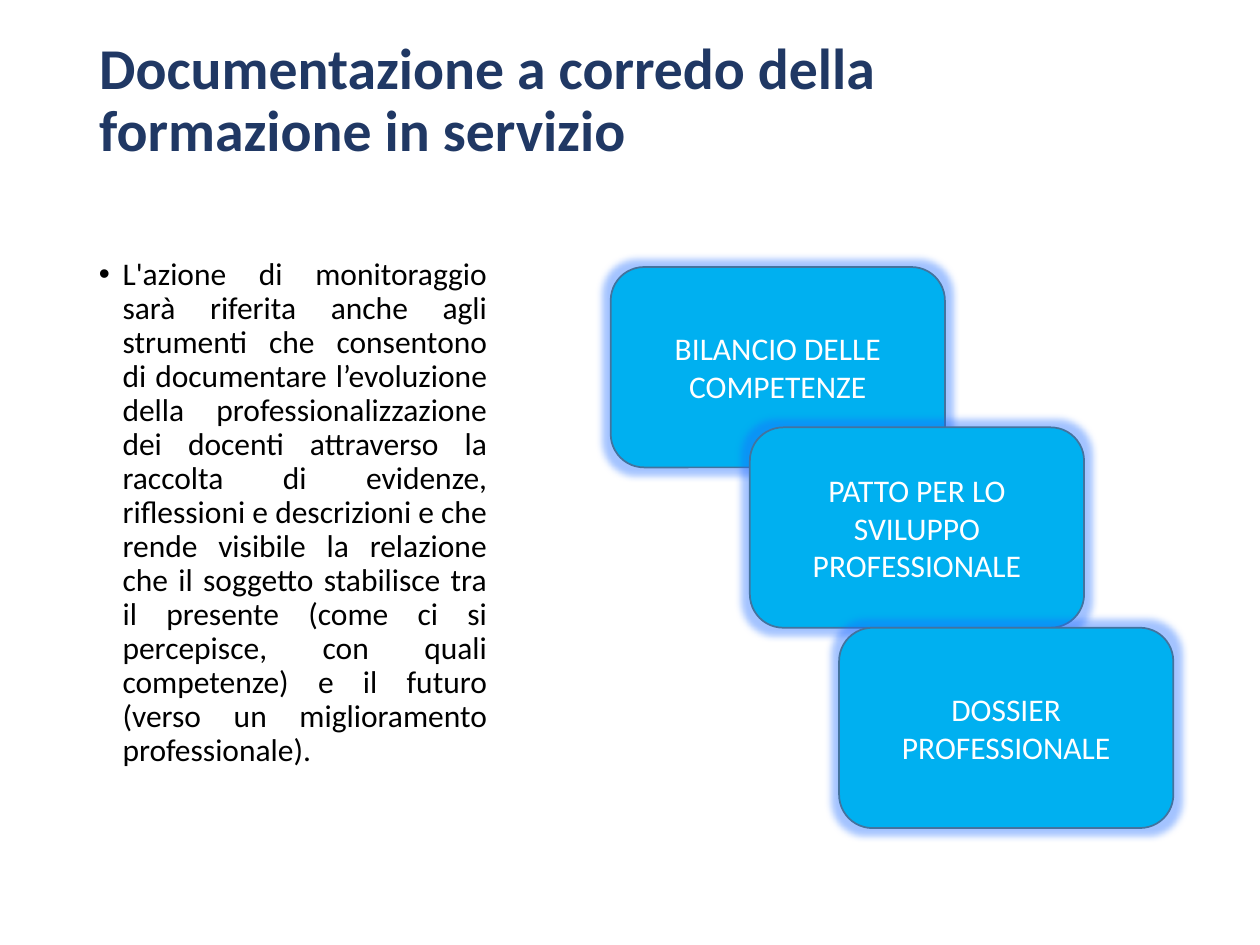
from dataclasses import dataclass

from lxml import etree
from pptx import Presentation
from pptx.dml.color import RGBColor
from pptx.enum.shapes import MSO_SHAPE
from pptx.enum.text import MSO_ANCHOR, MSO_AUTO_SIZE, PP_ALIGN
from pptx.oxml.ns import qn
from pptx.util import Pt

ROUNDED = MSO_SHAPE.ROUNDED_RECTANGLE
TOP, MIDDLE = MSO_ANCHOR.TOP, MSO_ANCHOR.MIDDLE
LEFT, CENTER, JUSTIFY = PP_ALIGN.LEFT, PP_ALIGN.CENTER, PP_ALIGN.JUSTIFY
NO_AUTOFIT = MSO_AUTO_SIZE.NONE
TITLE_ONLY = 5


@dataclass(frozen=True)
class Theme:
    font: str = "Calibri"
    title_size: float = 33
    body_size: float = 18
    navy: str = "203864"
    black: str = "000000"
    white: str = "FFFFFF"
    card_fill: str = "00B0F0"
    card_line: str = "43739E"
    glow: str = "1A6AFF"
    glow_radius: float = 8
    glow_opacity: int = 40


def write_text(shape, text, *, font, size, color, bold=False, align=LEFT,
               anchor=TOP, line_spacing=1.0, space_before=0):
    frame = shape.text_frame
    frame.word_wrap = True
    frame.auto_size = NO_AUTOFIT
    frame.vertical_anchor = anchor
    para = frame.paragraphs[0]
    para.alignment = align
    para.line_spacing = line_spacing
    para.space_before = Pt(space_before)
    span = para.add_run()
    span.text = text
    span.font.name = font
    span.font.size = Pt(size)
    span.font.bold = bold
    span.font.color.rgb = RGBColor.from_string(color)
    return para


def add_bullet(para, indent):
    """Give the paragraph a round bullet hanging by indent points."""
    properties = para._p.get_or_add_pPr()
    properties.set("marL", str(Pt(indent)))
    properties.set("indent", str(-Pt(indent)))
    etree.SubElement(properties, qn("a:buFont"), typeface="Arial")
    etree.SubElement(properties, qn("a:buChar"), char="•")


def add_glow(shape, color, radius, opacity):
    """Replace the inherited effects with a soft halo; opacity is in percent."""
    shape.shadow.inherit = False
    effects = shape._element.spPr.find(qn("a:effectLst"))
    glow = etree.SubElement(effects, qn("a:glow"), rad=str(Pt(radius)))
    tint = etree.SubElement(glow, qn("a:srgbClr"), val=color)
    etree.SubElement(tint, qn("a:alpha"), val=str(opacity * 1000))


class SlideBuilder:
    def __init__(self, page, theme):
        self.page = page
        self.theme = theme

    def title(self, text, left, top, width, height):
        box = self.page.shapes.title
        box.left, box.top = Pt(left), Pt(top)
        box.width, box.height = Pt(width), Pt(height)
        box.text_frame.margin_right = Pt(14)
        write_text(box, text, font=self.theme.font, size=self.theme.title_size,
                   color=self.theme.navy, bold=True, anchor=MIDDLE,
                   line_spacing=0.9)

    def bullet_text(self, text, left, top, width, height):
        box = self.page.shapes.add_textbox(Pt(left), Pt(top), Pt(width), Pt(height))
        para = write_text(box, text, font=self.theme.font,
                          size=self.theme.body_size, color=self.theme.black,
                          align=JUSTIFY, line_spacing=0.9, space_before=7.5)
        add_bullet(para, indent=13.5)

    def card(self, text, left, top, width, height):
        card = self.page.shapes.add_shape(
            ROUNDED, Pt(left), Pt(top), Pt(width), Pt(height))
        card.fill.solid()
        card.fill.fore_color.rgb = RGBColor.from_string(self.theme.card_fill)
        card.line.color.rgb = RGBColor.from_string(self.theme.card_line)
        card.line.width = Pt(1)
        add_glow(card, self.theme.glow, self.theme.glow_radius,
                 self.theme.glow_opacity)
        write_text(card, text, font=self.theme.font, size=self.theme.body_size,
                   color=self.theme.white, align=CENTER, anchor=MIDDLE)


def main():
    deck = Presentation()
    deck.slide_width, deck.slide_height = Pt(720), Pt(540)
    page = deck.slides.add_slide(deck.slide_layouts[TITLE_ONLY])
    builder = SlideBuilder(page, Theme())

    builder.title("Documentazione a corredo della formazione in servizio",
                  49.5, 6, 621, 104.4)
    builder.bullet_text(
        "L'azione di monitoraggio sarà riferita anche agli strumenti che "
        "consentono di documentare l’evoluzione della professionalizzazione "
        "dei docenti attraverso la raccolta di evidenze, riflessioni e "
        "descrizioni e che rende visibile la relazione che il soggetto "
        "stabilisce tra il presente (come ci si percepisce, con quali "
        "competenze) e il futuro (verso un miglioramento professionale).",
        49.5, 144, 236, 315.4)

    cards = [
        ("BILANCIO DELLE COMPETENZE", 349, 152.6),
        ("PATTO PER LO SVILUPPO PROFESSIONALE", 428.5, 244.2),
        ("DOSSIER PROFESSIONALE", 479.5, 358.7),
    ]
    for text, left, top in cards:
        builder.card(text, left, top, width=191, height=114.5)

    deck.save("out.pptx")


if __name__ == "__main__":
    main()
